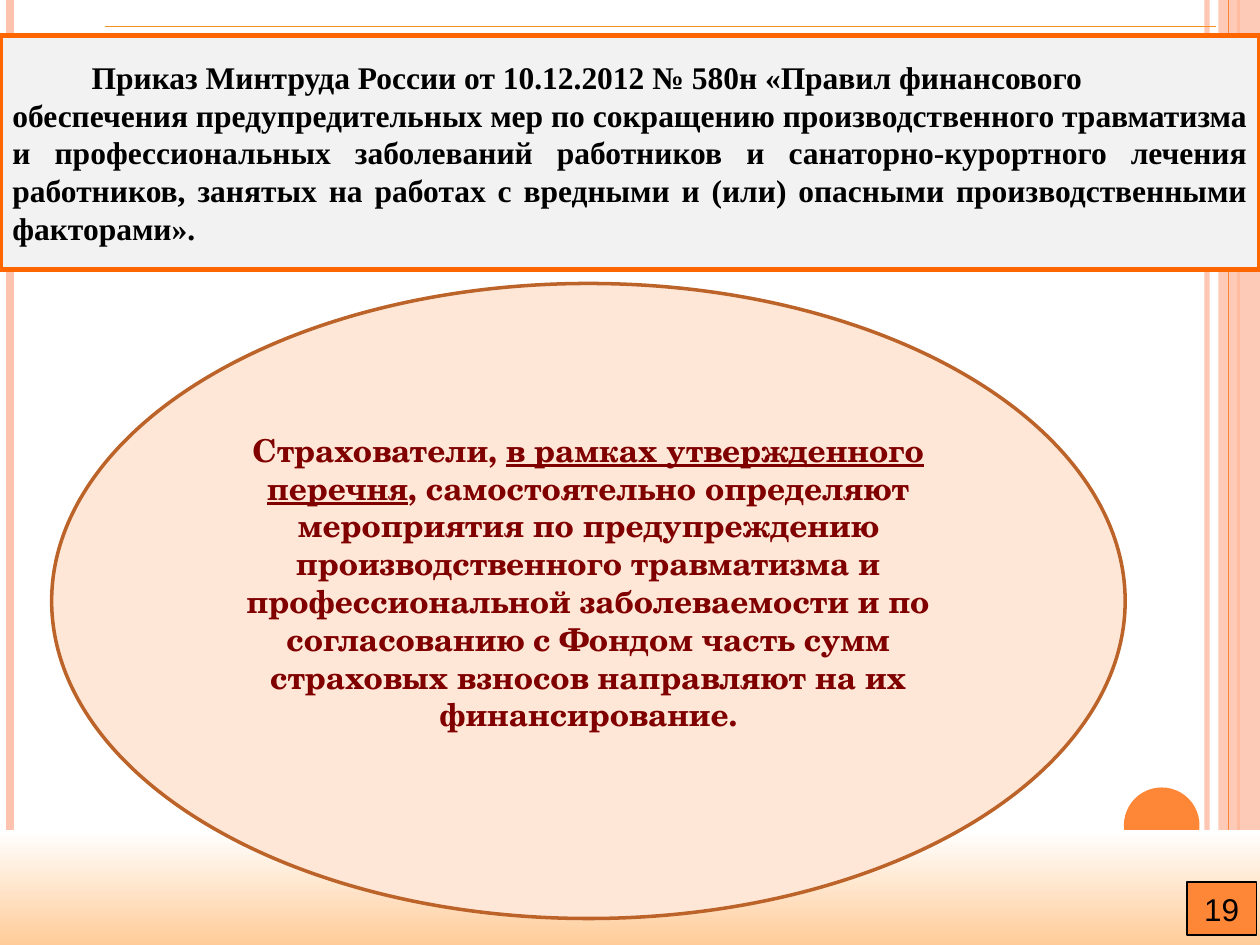
from lxml.etree import SubElement
from pptx import Presentation
from pptx.dml.color import RGBColor
from pptx.enum.shapes import MSO_CONNECTOR, MSO_SHAPE
from pptx.enum.text import MSO_ANCHOR, PP_ALIGN
from pptx.oxml.ns import qn
from pptx.util import Inches, Pt

PINK, ORANGE = "FEC3AE", "FE8637"


def rgb(value):
    return RGBColor.from_string(value)


def set_alpha(fill_owner, percent):
    color = next(fill_owner.iter(qn("a:srgbClr")))
    SubElement(color, qn("a:alpha")).set("val", str(percent * 1000))


def add_line(s, x1, y1, x2, y2, color, width, alpha=None):
    line = s.shapes.add_connector(
        MSO_CONNECTOR.STRAIGHT, Inches(x1), Inches(y1), Inches(x2), Inches(y2))
    line.line.color.rgb = rgb(color)
    line.line.width = Pt(width)
    props = line._element.spPr
    if alpha:
        set_alpha(props, alpha)
    SubElement(props, qn("a:effectLst"))


def add_box(s, box, fill, kind=MSO_SHAPE.RECTANGLE, line=None, width=1):
    sp = s.shapes.add_shape(kind, *map(Inches, box))
    sp.shadow.inherit = False
    if fill:
        sp.fill.solid()
        sp.fill.fore_color.rgb = rgb(fill)
    if line:
        sp.line.color.rgb = rgb(line)
        sp.line.width = Pt(width)
    else:
        sp.line.fill.background()
    sp.text_frame.vertical_anchor = MSO_ANCHOR.MIDDLE
    sp.text_frame.word_wrap = True
    return sp


def add_run(p, text, font, color="000000", bold=False, underline=False):
    r = p.add_run()
    r.text = text
    r.font.name = font
    r.font.size = Pt(18)
    r.font.bold = bold
    r.font.underline = underline
    r.font.color.rgb = rgb(color)


def add_side_stripes(s, height):
    add_line(s, 9.58, 0, 9.58, height, PINK, 3, alpha=93)
    add_line(s, 0.08, 0, 0.08, height, PINK, 4.5)
    add_line(s, 9.83, 0, 9.83, height, ORANGE, 1.5)
    band = add_box(s, (9.67, 0, 0.33, height), PINK)
    set_alpha(band._element.spPr, 87)
    add_line(s, 9.75, 0, 9.75, height, ORANGE, 0.75)
    add_box(s, (8.92, 6.25, 0.6, 0.6), ORANGE, MSO_SHAPE.OVAL)


def add_footer_glow(s, box):
    sp = add_box(s, box, None)
    sp.fill.gradient()
    sp.fill.gradient_angle = 270
    for stop, color, pos in zip(sp.fill.gradient_stops, ("FFFFFF", "FFCC99"), (0, 1)):
        stop.color.rgb = rgb(color)
        stop.position = pos


def add_order_title(s, box):
    tf = add_box(s, box, "F2F2F2", line="FF6600", width=3).text_frame
    p = tf.paragraphs[0]
    p.alignment = PP_ALIGN.LEFT
    p._p.get_or_add_pPr().set("indent", str(Inches(0.63)))
    add_run(p, "Приказ Минтруда России от 10.12.2012 № 580н «Правил финансового",
            "Times New Roman", bold=True)
    p = tf.add_paragraph()
    p.alignment = PP_ALIGN.JUSTIFY
    add_run(p, "обеспечения предупредительных мер по сокращению производственного "
               "травматизма и профессиональных заболеваний работников и "
               "санаторно-курортного лечения работников, занятых на работах с "
               "вредными и (или) опасными производственными факторами».",
            "Times New Roman", bold=True)


def add_page_number(s, box, number):
    tf = add_box(s, box, ORANGE, line="000000", width=0.75).text_frame
    tf.word_wrap = False
    p = tf.paragraphs[0]
    p.alignment = PP_ALIGN.CENTER
    add_run(p, number, "Arial")


def add_insurer_oval(s, box):
    tf = add_box(s, box, "FFE7D7", MSO_SHAPE.OVAL, "BC6329", 2).text_frame
    tf.margin_bottom = Inches(0.35)
    p = tf.paragraphs[0]
    p.alignment = PP_ALIGN.CENTER
    lines = [
        [("Страхователи, ", False), ("в рамках утвержденного", True)],
        [("перечня", True), (", самостоятельно определяют", False)],
        [("мероприятия по предупреждению", False)],
        [("производственного травматизма и", False)],
        [("профессиональной заболеваемости и по", False)],
        [("согласованию с Фондом часть сумм", False)],
        [("страховых взносов направляют на их", False)],
        [("финансирование.", False)],
    ]
    for i, line in enumerate(lines):
        if i:
            p.add_line_break()
        for text, underline in line:
            add_run(p, text, "TeX Gyre Schola", "800000", True, underline)


def main():
    prs = Presentation()
    prs.slide_width, prs.slide_height = Inches(10), Inches(7.5)
    s = prs.slides.add_slide(prs.slide_layouts[6])
    add_side_stripes(s, 7.5)
    add_footer_glow(s, (0, 6.59, 10, 0.91))
    add_line(s, 0.83, 0.21, 9.65, 0.21, "F39220", 0.75)
    add_order_title(s, (0, 0.28, 10, 1.86))
    add_page_number(s, (9.42, 7, 0.55, 0.42), "19")
    add_insurer_oval(s, (0.41, 2.25, 8.52, 5.04))
    prs.save("out.pptx")


if __name__ == "__main__":
    main()
